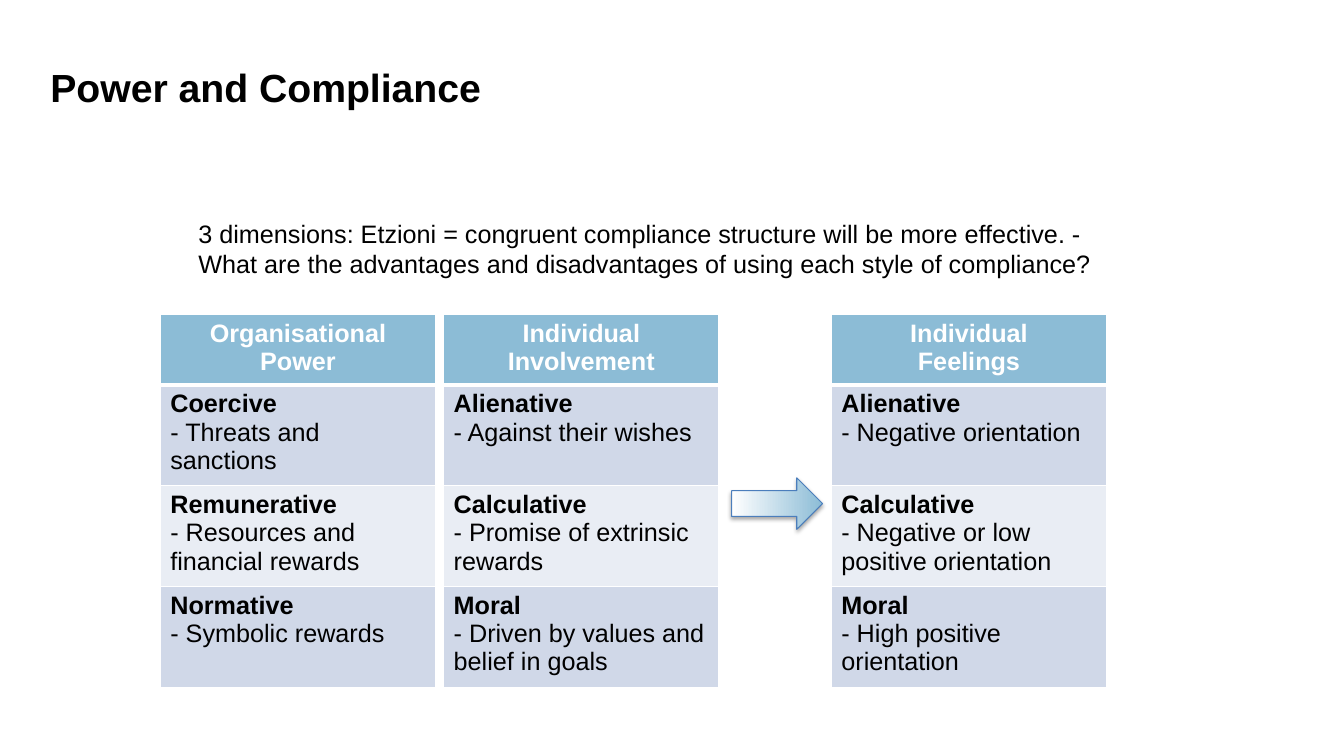
from lxml import etree
from pptx import Presentation
from pptx.dml.color import RGBColor
from pptx.enum.shapes import MSO_SHAPE
from pptx.enum.text import PP_ALIGN
from pptx.oxml import parse_xml
from pptx.oxml.ns import nsdecls, qn
from pptx.util import Cm, Pt

ARROW = MSO_SHAPE.RIGHT_ARROW
LEFT, CENTER = PP_ALIGN.LEFT, PP_ALIGN.CENTER

TITLE = "Power and Compliance"
INTRO = ("3 dimensions: Etzioni = congruent compliance structure will be more "
         "effective. - What are the advantages and disadvantages of using each "
         "style of compliance?")
TABLES = [
    (4.04, ["Organisational Power"], [
        ("Coercive", "- Threats and sanctions"),
        ("Remunerative", "- Resources and financial rewards"),
        ("Normative", "- Symbolic rewards")]),
    (11.18, ["Individual Involvement"], [
        ("Alienative", "- Against their wishes"),
        ("Calculative", "- Promise of extrinsic rewards"),
        ("Moral", "- Driven by values and belief in goals")]),
    (20.95, ["Individual", "Feelings"], [
        ("Alienative", "- Negative orientation"),
        ("Calculative", "- Negative or low positive orientation"),
        ("Moral", "- High positive orientation")]),
]
COLORS = {"text": "000000", "white": "FFFFFF", "head": "8CBCD6",
          "dark": "D0D8E8", "light": "E9EDF4", "edge": "4B7EBC"}
TOP, WIDTH = 7.92, 6.94
HEAD, ROW = 1.77, 2.54
THIN, THICK = 1, 3


def rgb(name):
    return RGBColor.from_string(COLORS[name])


def write(frame, lines, size=18, color="text", bold=(False,), align=LEFT, space=1.0):
    frame.word_wrap = True
    for i, line in enumerate(lines):
        para = frame.paragraphs[0] if i == 0 else frame.add_paragraph()
        para.alignment = align
        para.line_spacing = space
        run = para.add_run()
        run.text = line
        font = run.font
        font.name, font.size = "Arial", Pt(size)
        font.bold = bold[i % len(bold)]
        font.color.rgb = rgb(color)


def paint(cell, fill, top, bottom):
    props = cell._tc.get_or_add_tcPr()
    for side, width in zip("LRTB", (THIN, THIN, top, bottom)):
        line = etree.SubElement(props, qn("a:ln" + side), w=str(Pt(width)))
        solid = etree.SubElement(line, qn("a:solidFill"))
        etree.SubElement(solid, qn("a:srgbClr"), val=COLORS["white"])
    cell.fill.solid()
    cell.fill.fore_color.rgb = rgb(fill)


def add_text(slide, box, lines, **style):
    write(slide.shapes.add_textbox(*map(Cm, box)).text_frame, lines, **style)


def add_grid(slide, left, head, rows):
    count = len(rows) + 1
    frame = slide.shapes.add_table(count, 1, Cm(left), Cm(TOP), Cm(WIDTH),
                                   Cm(HEAD + ROW * len(rows)))
    table = frame.table
    table.rows[0].height = Cm(HEAD)
    cell = table.cell(0, 0)
    paint(cell, "head", THIN, THICK)
    write(cell.text_frame, head, color="white", bold=(True,), align=CENTER)
    for i, lines in enumerate(rows, 1):
        table.rows[i].height = Cm(ROW)
        cell = table.cell(i, 0)
        paint(cell, "dark" if i % 2 else "light", THICK if i == 1 else THIN, THIN)
        write(cell.text_frame, lines, bold=(True, False))


def add_arrow(slide, box):
    arrow = slide.shapes.add_shape(ARROW, *map(Cm, box))
    arrow.fill.gradient()
    arrow.fill.gradient_angle = 180
    for stop, name, place in zip(arrow.fill.gradient_stops, ("head", "white"), (0, 1)):
        stop.color.rgb = rgb(name)
        stop.position = place
    arrow.line.color.rgb = rgb("edge")
    arrow.line.width = Pt(0.75)
    arrow._element.spPr.append(parse_xml(
        f'<a:effectLst {nsdecls("a")}><a:outerShdw blurRad="{Pt(3.1)}" '
        f'dist="{Pt(1.8)}" dir="5400000" rotWithShape="0">'
        f'<a:srgbClr val="{COLORS["text"]}"><a:alpha val="35000"/></a:srgbClr>'
        '</a:outerShdw></a:effectLst>'))


def main():
    deck = Presentation()
    deck.slide_width, deck.slide_height = Cm(33.87), Cm(19.05)
    slide = deck.slides.add_slide(deck.slide_layouts[6])
    add_text(slide, (1.02, 1.6, 22.73, 2.69), [TITLE], size=28, bold=(True,), space=0.9)
    for left, head, rows in TABLES:
        add_grid(slide, left, head, rows)
    add_arrow(slide, (18.44, 12.04, 2.29, 1.3))
    add_text(slide, (4.75, 5.38, 23.16, 1.8), [INTRO])
    deck.save("out.pptx")


if __name__ == "__main__":
    main()
